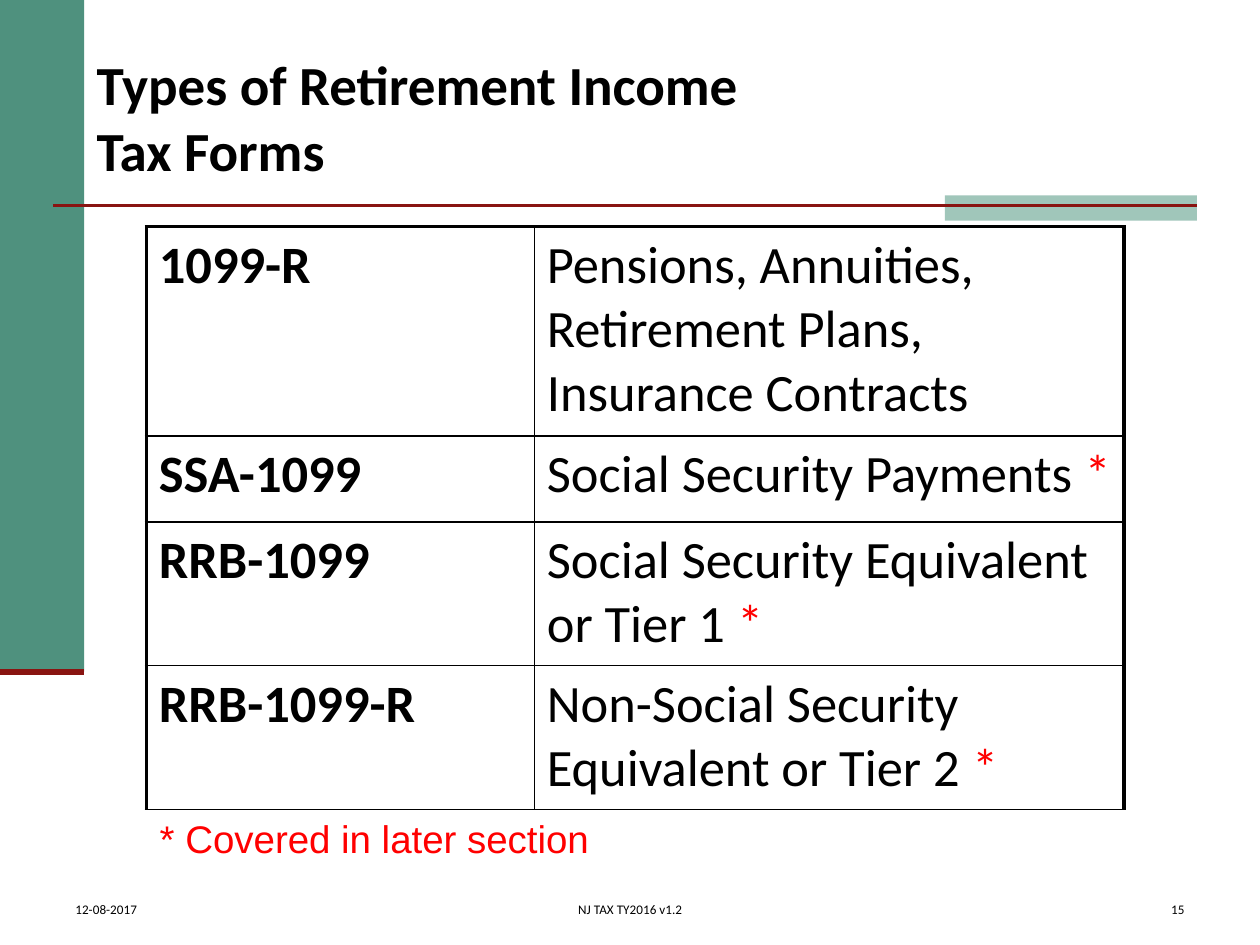
from lxml.etree import SubElement
from pptx import Presentation
from pptx.dml.color import RGBColor
from pptx.enum.shapes import MSO_CONNECTOR, MSO_SHAPE
from pptx.enum.text import MSO_ANCHOR, PP_ALIGN
from pptx.oxml.ns import qn
from pptx.util import Cm, Pt

BLACK = RGBColor(0x00, 0x00, 0x00)
RED = RGBColor(0xFF, 0x00, 0x00)
GREEN = RGBColor(0x4F, 0x91, 0x7E)
PALE_GREEN = RGBColor(0xA0, 0xC6, 0xBA)
DARK_RED = RGBColor(0x89, 0x14, 0x11)

TITLE = "Types of Retirement Income \vTax Forms"
FORMS = [
    ("1099-R", "Pensions, Annuities, Retirement Plans, Insurance Contracts", ""),
    ("SSA-1099", "Social Security Payments ", "*"),
    ("RRB-1099", "Social Security Equivalent or Tier 1 ", "*"),
    ("RRB-1099-R", "Non-Social Security Equivalent or Tier 2 ", "*"),
]
FOOTNOTE = "* Covered in later section"
FOOTERS = [
    ("12-08-2017", 1.27, 5.51, PP_ALIGN.LEFT),
    ("NJ TAX TY2016 v1.2", 8.41, 8.59, PP_ALIGN.CENTER),
    ("15", 18.85, 5.28, PP_ALIGN.RIGHT),
]
BANDS = [(0, 0, 1.7, 13.54, GREEN), (19.05, 3.94, 5.08, 0.51, PALE_GREEN)]
RULES = [(1.07, 24.13, 4.14, 1.5), (0, 1.7, 13.54, 3.5)]
TABLE_LEFT, TABLE_TOP = 2.95, 4.57
COLUMN_WIDTHS = [7.82, 11.89]
ROW_HEIGHTS = [4.22, 1.73, 2.9, 2.9]
THICK, THIN = 2.25, 1


def format_run(run, size, color, font="Calibri", bold=False):
    run.font.name = font
    run.font.size = Pt(size)
    run.font.bold = bold
    run.font.color.rgb = color


def add_text(slide, text, box, size, color=BLACK, font="Calibri", bold=False,
             anchor=MSO_ANCHOR.TOP, align=PP_ALIGN.LEFT, wrap=True):
    frame = slide.shapes.add_textbox(*map(Cm, box)).text_frame
    frame.word_wrap = wrap
    frame.vertical_anchor = anchor
    frame.text = text
    paragraph = frame.paragraphs[0]
    paragraph.alignment = align
    for run in paragraph.runs:
        format_run(run, size, color, font, bold)


def add_band(slide, left, top, width, height, color):
    shape = slide.shapes.add_shape(
        MSO_SHAPE.RECTANGLE, Cm(left), Cm(top), Cm(width), Cm(height))
    shape.shadow.inherit = False
    shape.fill.solid()
    shape.fill.fore_color.rgb = color
    shape.line.fill.background()


def add_rule(slide, start, end, top, width):
    connector = slide.shapes.add_connector(
        MSO_CONNECTOR.STRAIGHT, Cm(start), Cm(top), Cm(end), Cm(top))
    connector.line.color.rgb = DARK_RED
    connector.line.width = Pt(width)
    SubElement(connector._element.spPr, qn("a:effectLst"))


def set_borders(cell, widths):
    properties = cell._tc.get_or_add_tcPr()
    for index, (side, width) in enumerate(zip("LRTB", widths)):
        line = properties.makeelement(qn(f"a:ln{side}"), {"w": str(int(Pt(width)))})
        fill = SubElement(line, qn("a:solidFill"))
        SubElement(fill, qn("a:srgbClr"), val=str(BLACK))
        properties.insert(index, line)


def add_forms_table(slide):
    table = slide.shapes.add_table(
        len(FORMS), len(COLUMN_WIDTHS), Cm(TABLE_LEFT), Cm(TABLE_TOP),
        Cm(sum(COLUMN_WIDTHS)), Cm(sum(ROW_HEIGHTS))).table
    table.first_row = False
    table.horz_banding = False
    for column, width in zip(table.columns, COLUMN_WIDTHS):
        column.width = Cm(width)
    for row, height in zip(table.rows, ROW_HEIGHTS):
        row.height = Cm(height)
    for row_index, (form, description, mark) in enumerate(FORMS):
        for column_index, text in enumerate((form, description)):
            cell = table.cell(row_index, column_index)
            cell.fill.background()
            cell.text = text
            paragraph = cell.text_frame.paragraphs[0]
            format_run(paragraph.runs[0], 30, BLACK, bold=column_index == 0)
            if column_index == 1 and mark:
                run = paragraph.add_run()
                run.text = mark
                format_run(run, 30, RED)
            set_borders(cell, (
                THICK if column_index == 0 else THIN,
                THICK if column_index == 1 else THIN,
                THICK if row_index == 0 else THIN,
                THIN))


def main():
    presentation = Presentation()
    presentation.slide_width = Cm(25.4)
    presentation.slide_height = Cm(19.05)
    slide = presentation.slides.add_slide(presentation.slide_layouts[6])
    for band in BANDS:
        add_band(slide, *band)
    for rule in RULES:
        add_rule(slide, *rule)
    add_text(slide, TITLE, (1.7, 0.76, 22.43, 3.18), 31.5, bold=True,
             anchor=MSO_ANCHOR.MIDDLE)
    add_forms_table(slide)
    add_text(slide, FOOTNOTE, (2.97, 16.31, 9.27, 1.19), 22, RED, "Arial", wrap=False)
    for text, left, width, align in FOOTERS:
        add_text(slide, text, (left, 17.78, width, 0.84), 7.5,
                 anchor=MSO_ANCHOR.BOTTOM, align=align)
    presentation.save("out.pptx")


if __name__ == "__main__":
    main()
